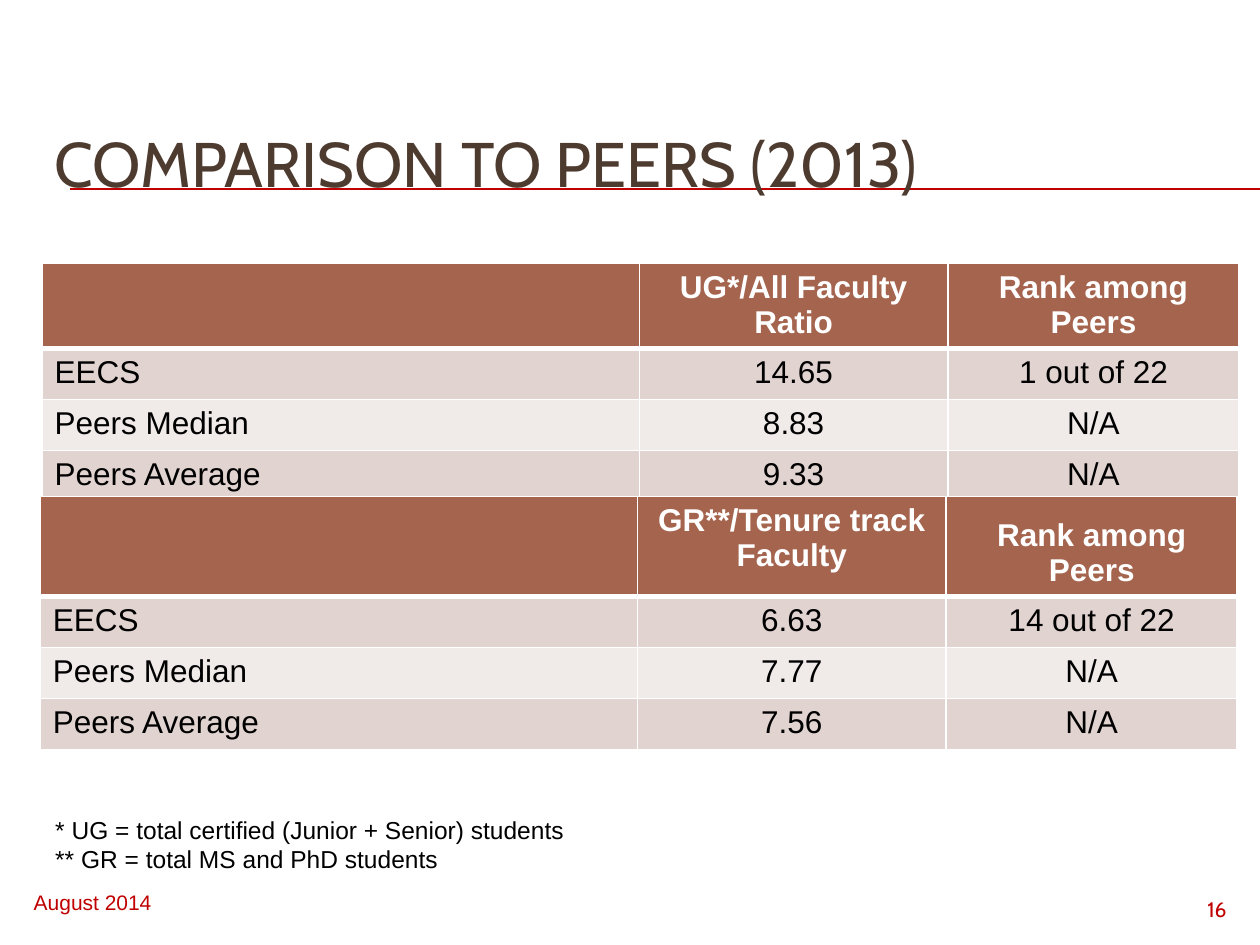
import pptx
import pptx.dml.color
import pptx.enum.shapes
import pptx.enum.text
import pptx.oxml
import pptx.oxml.ns
import pptx.util
from lxml import etree

Pt = pptx.util.Pt
ALIGN = pptx.enum.text.PP_ALIGN
ANCHOR = pptx.enum.text.MSO_ANCHOR
RED = "C00000"
COLUMN_WIDTHS = (341.3, 176.4, 166.3)
ROW_HEIGHT = 29.2


def color(value):
    return pptx.dml.color.RGBColor.from_string(value)


def style(para, size, font, ink, align=ALIGN.LEFT, bold=False):
    para.alignment = align
    para.font.size = Pt(size)
    para.font.name = font
    para.font.bold = bold
    para.font.color.rgb = color(ink)


def add_text(page, box, lines, size, font, ink, align=ALIGN.LEFT,
             anchor=ANCHOR.MIDDLE, wrap=True):
    frame = page.shapes.add_textbox(*map(Pt, box)).text_frame
    frame.word_wrap = wrap
    frame.vertical_anchor = anchor
    frame.text = "\n".join(lines)
    for para in frame.paragraphs:
        style(para, size, font, ink, align)


def add_title(page, box, title):
    left, top, width, height = box
    rule = page.shapes.add_connector(
        pptx.enum.shapes.MSO_CONNECTOR.STRAIGHT,
        Pt(left + 16.3), Pt(top + 48), Pt(720), Pt(top + 48))
    rule.line.color.rgb = color(RED)
    rule.line.width = Pt(0.75)
    etree.SubElement(rule._element.spPr, pptx.oxml.ns.qn("a:effectLst"))
    add_text(page, box, [title], 36, "Cabin", "4E3B30")


def set_borders(cell, widths):
    properties = cell._tc.get_or_add_tcPr()
    for index, (side, width) in enumerate(widths.items()):
        border = pptx.oxml.parse_xml(
            f'<a:ln{side} {pptx.oxml.ns.nsdecls("a")} w="{Pt(width)}">'
            '<a:solidFill><a:srgbClr val="FFFFFF"/></a:solidFill>'
            f'</a:ln{side}>')
        properties.insert(index, border)


def add_ratio_table(page, left, top, header_height, rows, rank_margin=3.6):
    height = header_height + ROW_HEIGHT * (len(rows) - 1)
    table = page.shapes.add_table(
        len(rows), len(COLUMN_WIDTHS), Pt(left), Pt(top),
        Pt(sum(COLUMN_WIDTHS)), Pt(height)).table
    for column, width in zip(table.columns, COLUMN_WIDTHS):
        column.width = Pt(width)
    for row_index, values in enumerate(rows):
        header = row_index == 0
        table.rows[row_index].height = Pt(header_height if header else ROW_HEIGHT)
        fill = "A5644E" if header else ("F0EAE9", "E1D3D0")[row_index % 2]
        for column_index, value in enumerate(values):
            cell = table.cell(row_index, column_index)
            cell.text = value
            cell.fill.solid()
            cell.fill.fore_color.rgb = color(fill)
            if header:
                cell.margin_bottom = Pt(1.8)
                cell.margin_top = Pt(rank_margin if column_index == 2 else 3.6)
            set_borders(cell, {"L": 1, "R": 1, "T": 3 if row_index == 1 else 1,
                               "B": 3 if header else 1})
            style(cell.text_frame.paragraphs[0], 18, "Arial",
                  "FFFFFF" if header else "000000",
                  ALIGN.CENTER if column_index else ALIGN.LEFT, header)


def add_footer(page, left, top, date, number):
    add_text(page, (left, top, 198, 23), [date], 12, "Arial", RED)
    add_text(page, (left + 635.8, top + 6, 60, 19.4), [number], 12, "Cabin", RED,
             ALIGN.RIGHT)


def main():
    deck = pptx.Presentation()
    deck.slide_width, deck.slide_height = Pt(720), Pt(540)
    page = deck.slides.add_slide(deck.slide_layouts[6])
    add_title(page, (24, 60, 684, 66), "COMPARISON TO PEERS (2013)")
    add_ratio_table(page, 24, 150.5, 46.8, [
        ("", "UG*/All Faculty Ratio", "Rank among Peers"),
        ("EECS", "14.65", "1 out of 22"),
        ("Peers Median", "8.83", "N/A"),
        ("Peers Average", "9.33", "N/A"),
    ])
    add_footer(page, 12.2, 504, "August 2014", "16")
    add_ratio_table(page, 23, 283.7, 55.4, [
        ("", "GR**/Tenure track Faculty", "Rank among Peers"),
        ("EECS", "6.63", "14 out of 22"),
        ("Peers Median", "7.77", "N/A"),
        ("Peers Average", "7.56", "N/A"),
    ], rank_margin=12)
    add_text(page, (24.5, 462.2, 307.4, 41), [
        "* UG = total certified (Junior + Senior) students",
        "** GR = total MS and PhD students",
    ], 14, "Arial", "000000", anchor=ANCHOR.TOP, wrap=False)
    deck.save("out.pptx")


if __name__ == "__main__":
    main()
